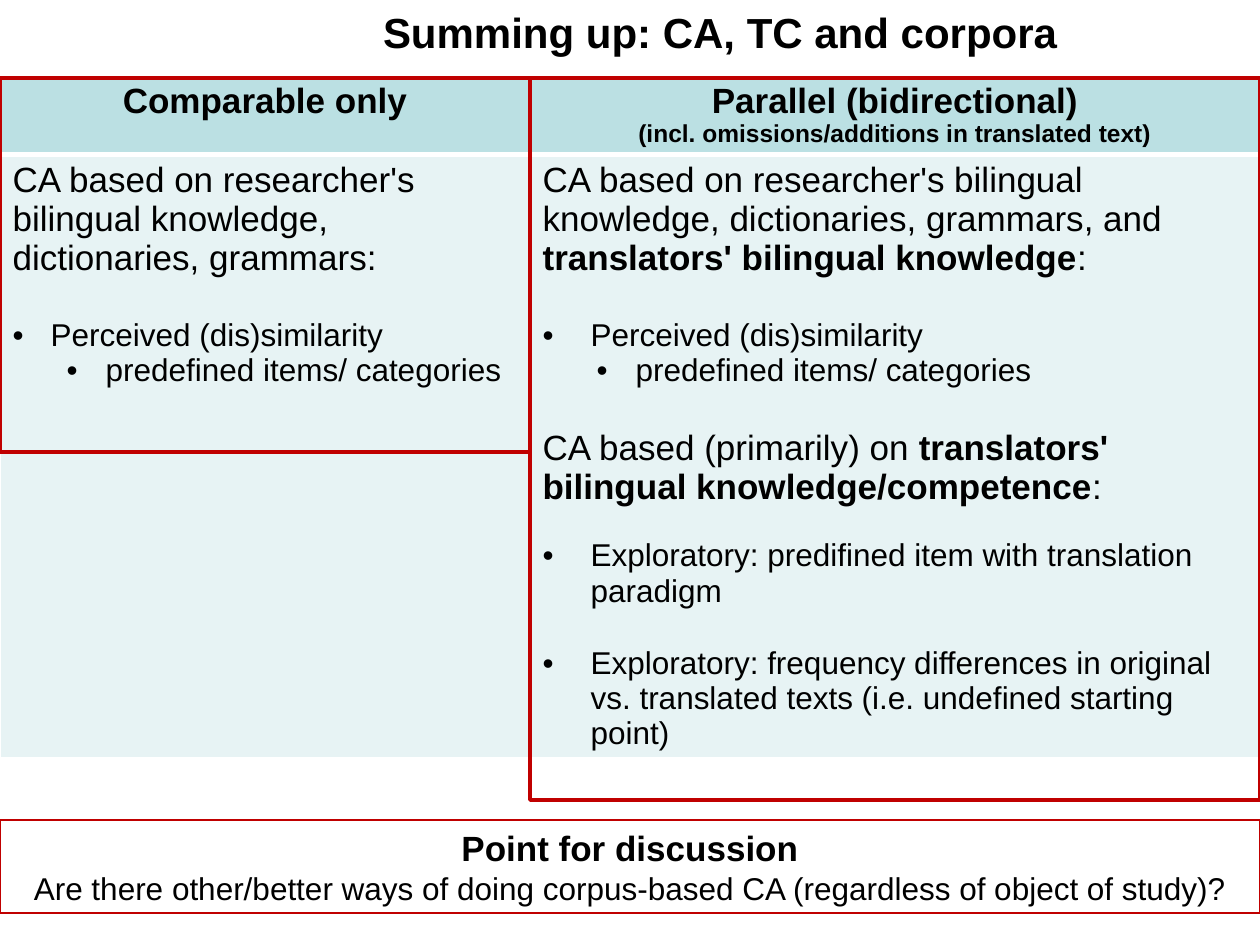
"""Build the slide that compares comparable and parallel corpora."""
from lxml import etree
from pptx import Presentation
from pptx import util as u
from pptx.dml.color import RGBColor
from pptx.enum import shapes, text
from pptx.oxml import ns

COLORS = {
    "text": "000000",
    "header": "BBE0E3",
    "body": "E7F3F4",
    "border": "FFFFFF",
    "frame": "C00000",
}
FONT = "Arial"
EMU_PER_PX = 914400 / 126


def px(length):
    return u.Emu(round(length * EMU_PER_PX))


def color(name):
    return RGBColor.from_string(COLORS[name])


def line(segments, size=20, before=0, centered=False, bullet=None, level=0):
    return dict(segments=segments, size=size, before=before,
                centered=centered, bullet=bullet, level=level)


class SlideBuilder:
    def __init__(self, slide):
        self.slide = slide

    def add_lines(self, text_frame, lines):
        for index, item in enumerate(lines):
            paragraph = text_frame.add_paragraph() if index else text_frame.paragraphs[0]
            alignment = text.PP_ALIGN.CENTER if item["centered"] else text.PP_ALIGN.LEFT
            paragraph.alignment = alignment
            paragraph.level = item["level"]
            paragraph.space_before = u.Pt(item["before"])
            if item["bullet"]:
                self.add_bullet(paragraph, *item["bullet"])
            for words, bold in item["segments"]:
                run = paragraph.add_run()
                run.text = words
                run.font.name = FONT
                run.font.size = u.Pt(item["size"])
                run.font.bold = bold
                run.font.color.rgb = color("text")

    def add_bullet(self, paragraph, margin, hanging):
        properties = paragraph._p.get_or_add_pPr()
        properties.set("marL", str(px(margin)))
        properties.set("indent", str(-px(hanging)))
        etree.SubElement(properties, ns.qn("a:buFont"), typeface=FONT)
        etree.SubElement(properties, ns.qn("a:buChar"), char="•")

    def add_title(self, words, left, top, width, height):
        title = self.slide.shapes.title
        title.left, title.top, title.width, title.height = map(px, (left, top, width, height))
        frame = title.text_frame
        frame.vertical_anchor = text.MSO_ANCHOR.MIDDLE
        frame.margin_left = frame.margin_right = px(11)
        frame.margin_top = frame.margin_bottom = px(5)
        self.add_lines(frame, [line([(words, True)], 24)])

    def add_table(self, left, top, widths, heights, rows):
        table = self.slide.shapes.add_table(
            len(heights), len(widths), px(left), px(top),
            px(sum(widths)), px(sum(heights))).table
        table.horz_banding = False
        for column, width in zip(table.columns, widths):
            column.width = px(width)
        for row_index, (row, height) in enumerate(zip(rows, heights)):
            table.rows[row_index].height = px(height)
            for column_index, lines in enumerate(row):
                cell = table.cell(row_index, column_index)
                self.add_borders(cell, {"T" if row_index else "B": 3})
                cell.fill.solid()
                cell.fill.fore_color.rgb = color("body" if row_index else "header")
                self.add_lines(cell.text_frame, lines)

    def add_borders(self, cell, widths):
        properties = cell._tc.get_or_add_tcPr()
        for side in "LRTB":
            border = etree.SubElement(properties, ns.qn(f"a:ln{side}"),
                                      w=str(u.Pt(widths.get(side, 1))))
            fill = etree.SubElement(border, ns.qn("a:solidFill"))
            etree.SubElement(fill, ns.qn("a:srgbClr"), val=COLORS["border"])

    def add_frame(self, left, top, width, height, weight, lines=()):
        shape = self.slide.shapes.add_shape(
            shapes.MSO_SHAPE.RECTANGLE, *map(px, (left, top, width, height)))
        shape.shadow.inherit = False
        shape.fill.background()
        shape.line.color.rgb = color("frame")
        shape.line.width = u.Pt(weight)
        shape.text_frame.word_wrap = True
        self.add_lines(shape.text_frame, lines)


def similarity_lines(bullet):
    return [
        line([("Perceived (dis)similarity", False)], 18, 23, bullet=bullet),
        line([("predefined items/ categories", False)], 18, bullet=(93, 39), level=1),
    ]


def main():
    presentation = Presentation()
    presentation.slide_width, presentation.slide_height = px(1260), px(945)
    slide = presentation.slides.add_slide(presentation.slide_layouts[5])
    builder = SlideBuilder(slide)
    builder.add_title("Summing up: CA, TC and corpora", 372, -9, 1091, 82)

    narrow, wide = (38, 38), (48, 48)
    header = [
        [line([("Comparable only", True)], centered=True)],
        [line([("Parallel (bidirectional)", True)], centered=True),
         line([("(incl. omissions/additions in translated text)", True)], 14, centered=True)],
    ]
    comparable = [
        line([("CA based on researcher's bilingual knowledge, dictionaries, grammars:", False)]),
        *similarity_lines(narrow),
    ]
    parallel = [
        line([("CA based on researcher's bilingual knowledge, dictionaries, grammars, and ", False),
              ("translators' bilingual knowledge", True), (":", False)]),
        *similarity_lines(wide),
        line([("CA based (primarily) on ", False),
              ("translators' bilingual knowledge/competence", True), (":", False)], before=23),
        line([("Exploratory: predifined item with translation paradigm", False)],
             18, 18, bullet=wide),
        line([("Exploratory: frequency differences in original vs. translated texts "
               "(i.e. undefined starting point)", False)], 18, 21, bullet=wide),
    ]
    columns = (530, 730)
    builder.add_table(0, 75, columns, (78, 599), [header, [comparable, parallel]])

    builder.add_frame(0, 820, 1260, 93, 0.75, [
        line([("Point for discussion", True)], centered=True),
        line([("Are there other/better ways of doing corpus-based CA "
               "(regardless of object of study)?", False)], 18, centered=True),
    ])
    builder.add_frame(0, 78, columns[0], 374, 2)
    builder.add_frame(columns[0], 78, columns[1], 722, 2)
    presentation.save("out.pptx")


if __name__ == "__main__":
    main()
